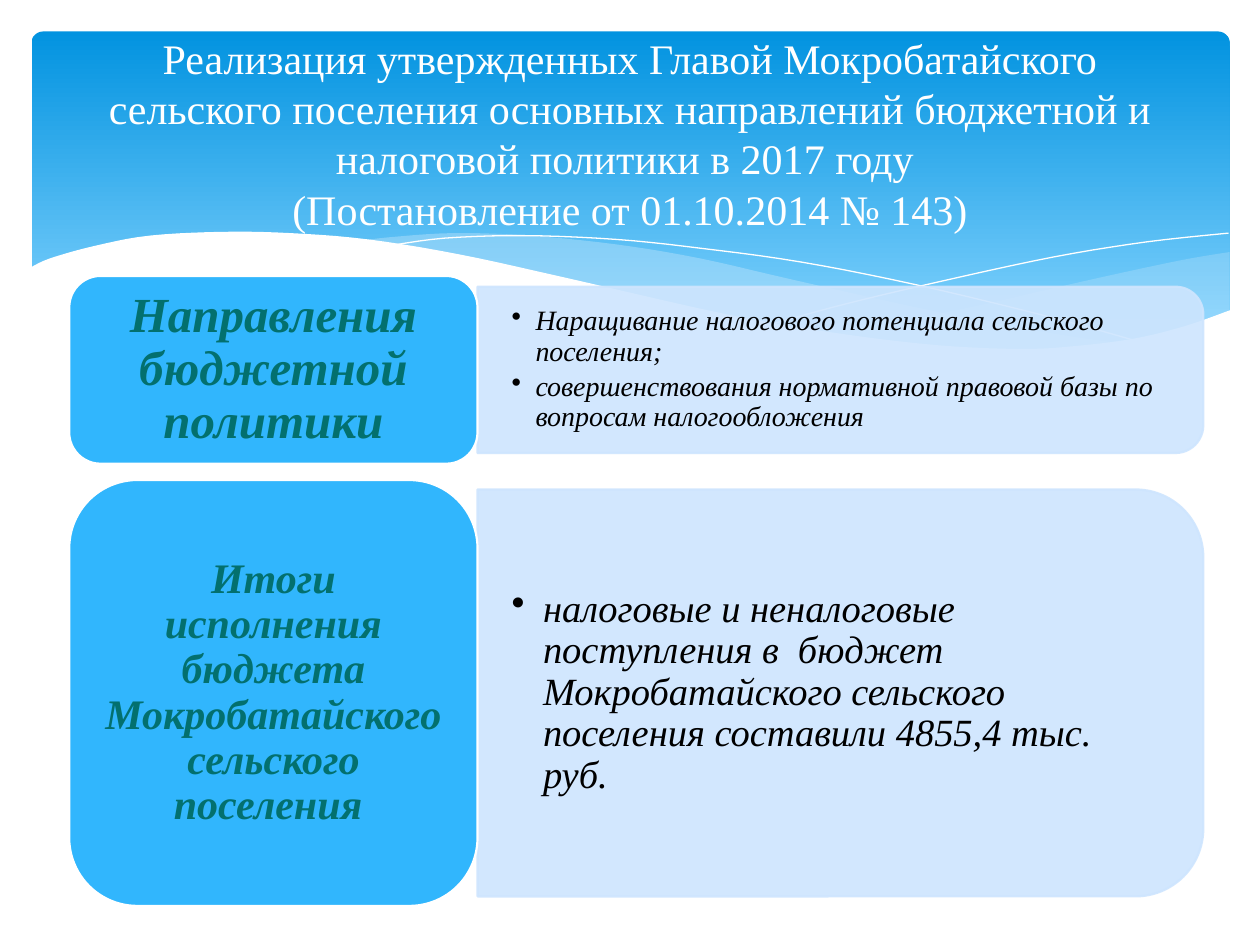
"""Build the slide on budget and tax policy directions and results."""
from dataclasses import dataclass
from typing import Optional

from lxml import etree
from pptx import Presentation
from pptx import util as u
from pptx.dml.color import RGBColor
from pptx.enum import shapes, text
from pptx.oxml import ns

Point = tuple[float, float]

WHITE = RGBColor(0xFF, 0xFF, 0xFF)
BLACK = RGBColor(0, 0, 0)
SKY_TOP = RGBColor(0x02, 0x93, 0xE0)
SKY_BOTTOM = RGBColor(0x83, 0xD3, 0xFE)
MIST = RGBColor(0xC6, 0xE7, 0xFC)
LABEL_BLUE = RGBColor(0x31, 0xB6, 0xFD)
PANEL_BLUE = RGBColor(0xCE, 0xE5, 0xFE)
TEAL = RGBColor(0x03, 0x70, 0x6E)
FONT = "Times New Roman"
LABEL_LEFT, LABEL_WIDTH = 0.55, 3.24
PANEL_LEFT, PANEL_WIDTH = LABEL_LEFT + LABEL_WIDTH, 5.76


@dataclass(frozen=True)
class Wave:
    """A filled outline or an open stroke made of smooth curves."""
    curves: list[list[Point]]
    fill: Optional[RGBColor] = None
    opacity: int = 100


@dataclass(frozen=True)
class Topic:
    """A label with its panel of bullet points."""
    label: str
    label_size: int
    label_top: float
    label_height: float
    label_inset: float
    panel_height: float
    bullets: list[str]
    bullet_size: int
    bullet_indent: float
    bullet_width: float


WAVES = [
    Wave([[(9.76, 2), (9.35, 2.07), (8.61, 2.23), (7.79, 2.42), (7.06, 2.57), (6.61, 2.65)],
          [(6.61, 2.65), (7.05, 2.71), (7.57, 2.76), (8.14, 2.78), (8.63, 2.75),
           (9.05, 2.69), (9.42, 2.59), (9.76, 2.47)]], MIST, 29),
    Wave([[(8.93, 2.73), (8.37, 2.65), (7.41, 2.47), (6.29, 2.22), (5.55, 2.05),
           (4.89, 1.94), (4.2, 1.87), (3.61, 1.85), (3.13, 1.88), (2.86, 1.91)],
          [(2.86, 1.91), (3.42, 1.99), (4.04, 2.11), (4.49, 2.22), (5.3, 2.4),
           (6.18, 2.58), (6.95, 2.7), (7.61, 2.77), (8.18, 2.78), (8.93, 2.73)]], MIST, 40),
    Wave([[(3.09, 1.95), (3.53, 1.89), (4.16, 1.87), (4.89, 1.9), (5.56, 1.97),
           (6.36, 2.08), (7.27, 2.26), (8.31, 2.51), (9.07, 2.72)]]),
    Wave([[(6.13, 2.57), (6.72, 2.41), (7.48, 2.23), (8.36, 2.04), (9.1, 1.92), (9.75, 1.85)]]),
    Wave([[(9.77, 2.46), (9.4, 2.59), (8.99, 2.69), (8.5, 2.75), (8.09, 2.77), (7.44, 2.74),
           (6.68, 2.65), (5.79, 2.5), (4.47, 2.2), (3.65, 2.02), (2.92, 1.9), (2.3, 1.85),
           (1.77, 1.84), (1.19, 1.87), (0.76, 1.95), (0.4, 2.05), (0.23, 2.13)],
          [(0.23, 3.29), (9.77, 3.29)]], WHITE),
]

TOPICS = [
    Topic("Направления бюджетной политики", 28, 2.19, 1.49, 0.12, 1.32,
          ["Наращивание налогового потенциала сельского поселения;",
           "совершенствования нормативной правовой базы по вопросам налогообложения"],
          16, 0.19, 5.7),
    Topic("Итоги исполнения бюджета Мокробатайского сельского поселения ",
          24, 3.81, 3.38, 0.1, 3.23,
          ["налоговые и неналоговые поступления в  бюджет Мокробатайского сельского "
           "поселения составили 4855,4 тыс. руб."],
          22, 0.25, 5.6),
]


def smooth(knots: list[Point], steps: int = 5) -> list[Point]:
    """Return points of a Catmull-Rom curve through the knots."""
    if len(knots) < 3:
        return knots
    padded = [knots[0], *knots, knots[-1]]
    curve = []
    for a, b, c, d in zip(padded, padded[1:], padded[2:], padded[3:]):
        for step in range(steps):
            t = step / steps
            curve.append(tuple(
                q + 0.5 * t * (r - p + t * (2 * p - 5 * q + 4 * r - s + t * (3 * (q - r) + s - p)))
                for p, q, r, s in zip(a, b, c, d)))
    return curve + [knots[-1]]


def set_opacity(color_parent, percent: int) -> None:
    """Add an alpha value to the solid colour inside the given element."""
    for color in color_parent.iter(ns.qn("a:srgbClr")):
        etree.SubElement(color, ns.qn("a:alpha"), val=str(percent * 1000))


def paint(shape, fill: RGBColor, line: Optional[RGBColor] = None) -> None:
    """Give a shape a plain fill, an optional outline and no shadow."""
    shape.shadow.inherit = False
    shape.fill.solid()
    shape.fill.fore_color.rgb = fill
    if line is None:
        shape.line.fill.background()
    else:
        shape.line.color.rgb = line
        shape.line.width = u.Pt(1.25)


def prepare_frame(frame, inset_x: float, inset_y: float) -> None:
    """Wrap and vertically centre a text frame with even insets."""
    frame.word_wrap = True
    frame.vertical_anchor = text.MSO_ANCHOR.MIDDLE
    frame.margin_left = frame.margin_right = u.Inches(inset_x)
    frame.margin_top = frame.margin_bottom = u.Inches(inset_y)


def add_run(paragraph, words: str, size: int, color: RGBColor,
            bold: bool = False, italic: bool = False) -> None:
    """Append one formatted run."""
    run = paragraph.add_run()
    run.text = words
    run.font.name, run.font.size = FONT, u.Pt(size)
    run.font.bold, run.font.italic = bold, italic
    run.font.color.rgb = color


def add_sky(slide) -> None:
    """Draw the gradient header card."""
    sky = slide.shapes.add_shape(shapes.MSO_SHAPE.ROUNDED_RECTANGLE, u.Inches(0.25),
                                 u.Inches(0.25), u.Inches(9.51), u.Inches(2.7))
    sky.adjustments[0] = 0.034
    sky.shadow.inherit = False
    sky.line.fill.background()
    sky.fill.gradient()
    sky.fill.gradient_angle = 270
    for stop, color, position in zip(sky.fill.gradient_stops, (SKY_TOP, SKY_BOTTOM), (0, 0.9)):
        stop.color.rgb, stop.position = color, position


def add_wave(slide, wave: Wave) -> None:
    """Draw one wave of the header."""
    points = [(u.Inches(x), u.Inches(y)) for knots in wave.curves for x, y in smooth(knots)]
    builder = slide.shapes.build_freeform(*points[0], scale=1.0)
    builder.add_line_segments(points[1:], close=wave.fill is not None)
    outline = builder.convert_to_shape()
    if wave.fill is None:
        outline.shadow.inherit = False
        outline.fill.background()
        outline.line.color.rgb = WHITE
        outline.line.width = u.Pt(0)
    else:
        paint(outline, wave.fill)
        if wave.opacity < 100:
            set_opacity(outline.element.spPr, wave.opacity)


def add_topic(slide, topic: Topic) -> None:
    """Draw a panel, its bullet points and its label."""
    middle = topic.label_top + topic.label_height / 2
    top = middle - topic.panel_height / 2
    panel = slide.shapes.add_shape(
        shapes.MSO_SHAPE.ROUND_2_SAME_RECTANGLE,
        u.Inches(PANEL_LEFT + (PANEL_WIDTH - topic.panel_height) / 2),
        u.Inches(middle - PANEL_WIDTH / 2), u.Inches(topic.panel_height), u.Inches(PANEL_WIDTH))
    panel.rotation = 90
    paint(panel, PANEL_BLUE, PANEL_BLUE)
    set_opacity(panel.element.spPr, 90)

    points = slide.shapes.add_textbox(u.Inches(PANEL_LEFT), u.Inches(top),
                                      u.Inches(topic.bullet_width), u.Inches(topic.panel_height))
    prepare_frame(points.text_frame, 0.27, 0.14)
    for index, words in enumerate(topic.bullets):
        frame = points.text_frame
        paragraph = frame.add_paragraph() if index else frame.paragraphs[0]
        paragraph.line_spacing, paragraph.space_after = 0.9, u.Pt(3)
        properties = paragraph._p.get_or_add_pPr()
        properties.set("marL", str(u.Inches(topic.bullet_indent)))
        properties.set("indent", str(-u.Inches(topic.bullet_indent)))
        etree.SubElement(properties, ns.qn("a:buChar"), char="•")
        add_run(paragraph, words, topic.bullet_size, BLACK, italic=True)

    label = slide.shapes.add_shape(
        shapes.MSO_SHAPE.ROUNDED_RECTANGLE, u.Inches(LABEL_LEFT), u.Inches(topic.label_top),
        u.Inches(LABEL_WIDTH), u.Inches(topic.label_height))
    paint(label, LABEL_BLUE, WHITE)
    prepare_frame(label.text_frame, topic.label_inset, topic.label_inset / 2)
    paragraph = label.text_frame.paragraphs[0]
    paragraph.alignment, paragraph.line_spacing = text.PP_ALIGN.CENTER, 0.9
    add_run(paragraph, topic.label, topic.label_size, TEAL, bold=True, italic=True)


def add_title(slide) -> None:
    """Write the slide title over the header."""
    title = slide.shapes.add_textbox(u.Inches(0.5), u.Inches(0.37), u.Inches(9), u.Inches(1.37))
    prepare_frame(title.text_frame, 0.1, 0.05)
    paragraph = title.text_frame.paragraphs[0]
    paragraph.alignment = text.PP_ALIGN.CENTER
    add_run(paragraph, "Реализация утвержденных Главой Мокробатайского сельского поселения "
            "основных направлений бюджетной и налоговой политики в 2017 году ", 24, WHITE)
    paragraph.add_line_break()
    add_run(paragraph, "(Постановление от 01.10.2014 № 143)", 24, WHITE)


def main() -> None:
    """Assemble and save the presentation."""
    deck = Presentation()
    deck.slide_width, deck.slide_height = u.Inches(10), u.Inches(7.5)
    slide = deck.slides.add_slide(deck.slide_layouts[6])
    add_sky(slide)
    for wave in WAVES:
        add_wave(slide, wave)
    for topic in TOPICS:
        add_topic(slide, topic)
    add_title(slide)
    deck.save("out.pptx")


if __name__ == "__main__":
    main()
